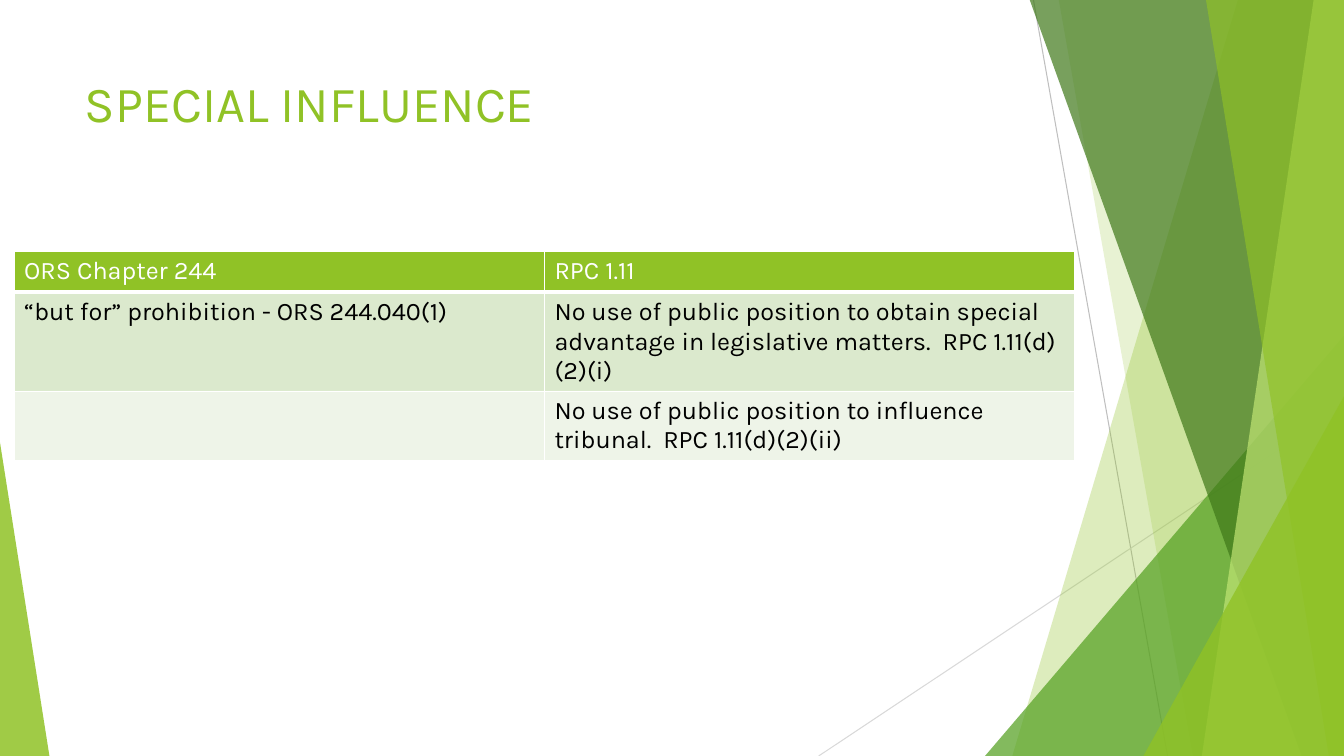
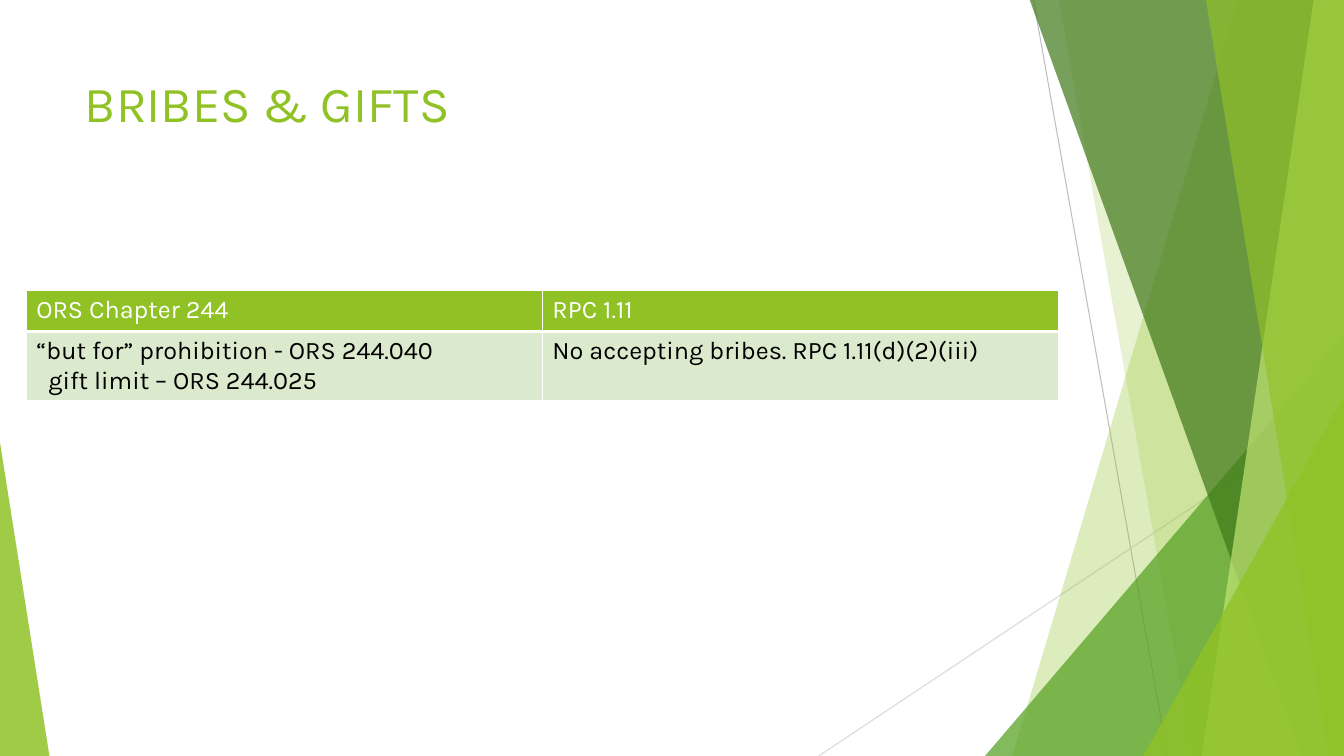
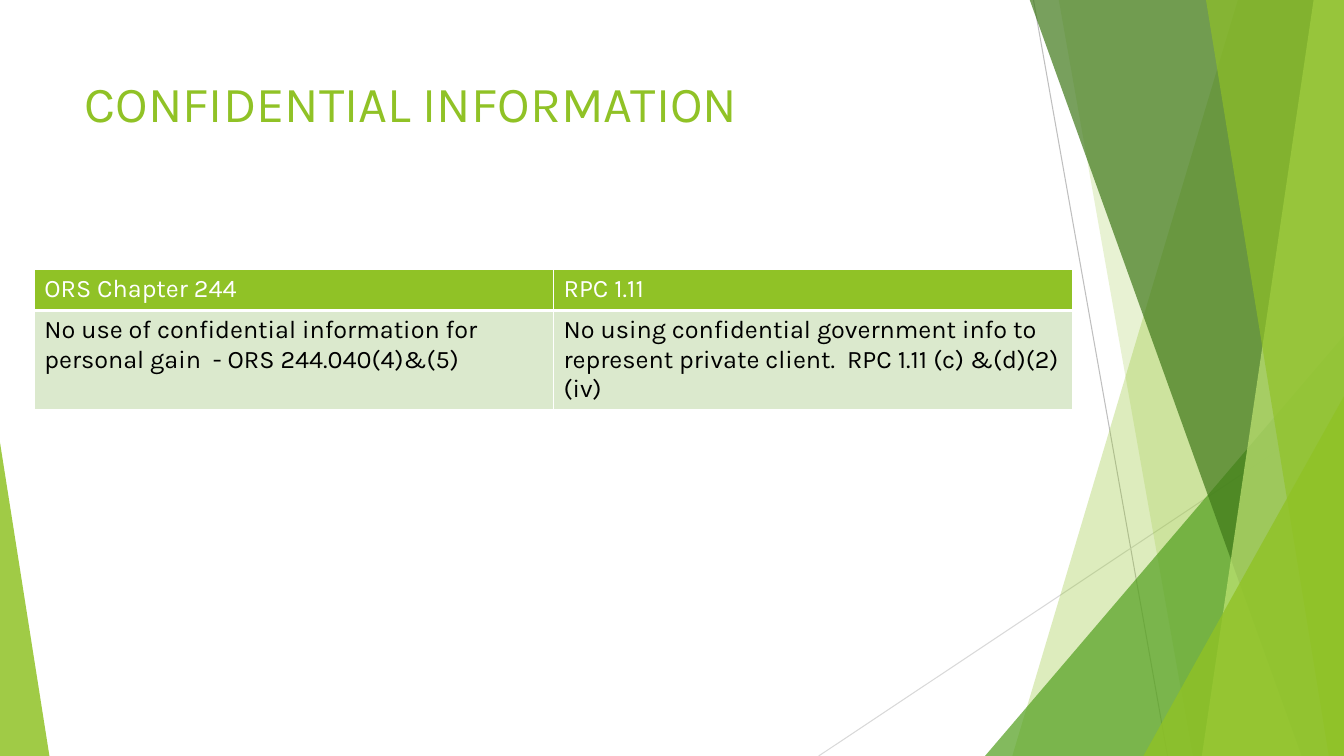
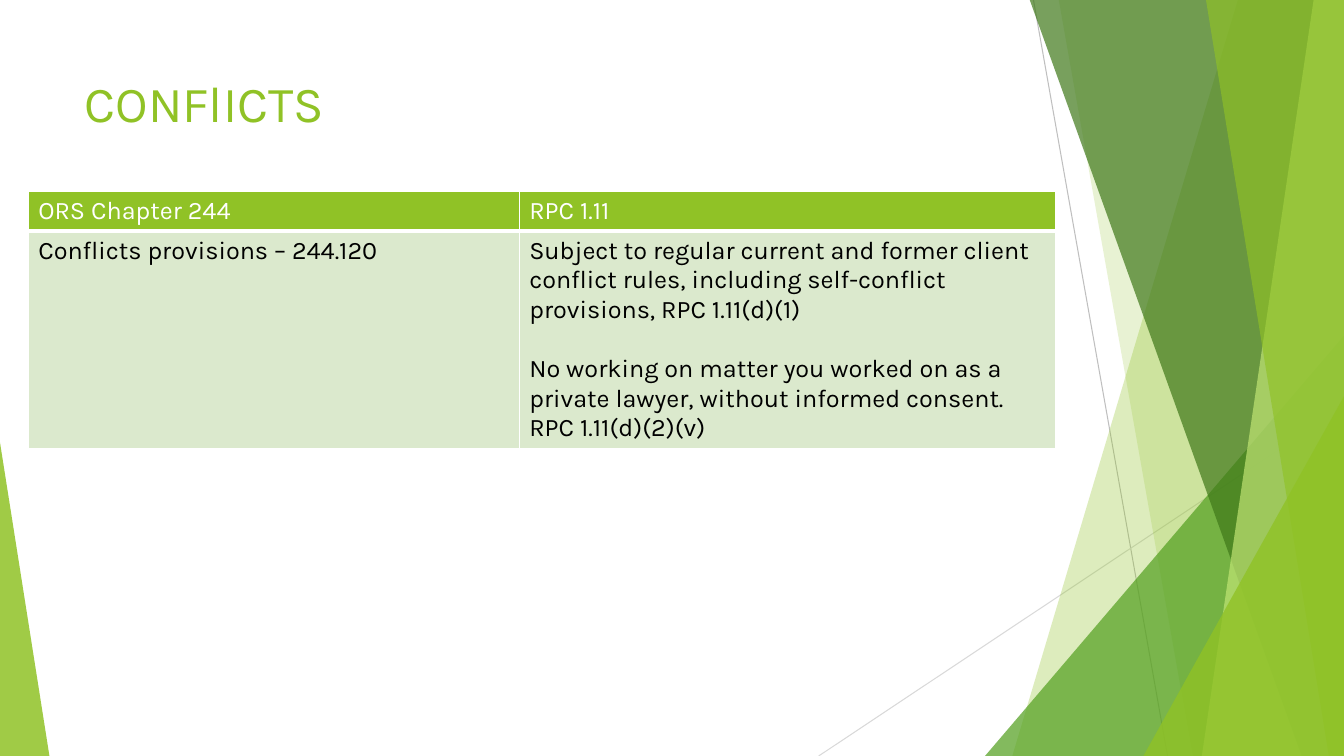
"""Build four slides that set ORS Chapter 244 beside RPC 1.11."""
from dataclasses import dataclass

from lxml import etree
from pptx import Presentation
from pptx import util as u
from pptx.dml import color
from pptx.enum import shapes, text
from pptx.oxml import ns

WIDTH, HEIGHT, BLEED = 13.33, 7.5, 0.01
FONT = "Karla"
LIME, GREEN, FOREST, PALE = "90C226", "54A021", "3F7819", "C0E474"
WHITE, BLACK = "FFFFFF", "000000"
BANDS = ("DBE9CD", "EEF4E8")
HEADER = ("ORS Chapter 244", "RPC 1.11")


@dataclass
class Para:
    """A cell paragraph with its left indent and space before."""
    text: str
    indent: float = 0
    before: float = 0


@dataclass
class Line:
    """A thin straight line."""
    start: tuple[float, float]
    end: tuple[float, float]
    colour: str


@dataclass
class Blade:
    """A slanted band that reaches the right edge."""
    top_x: float
    bottom_x: float
    colour: str
    alpha: int


@dataclass
class Wedge:
    """A right triangle standing on the bottom edge."""
    left: float
    top: float
    width: float
    apex: float
    colour: str
    alpha: int


@dataclass
class Comparison:
    """A titled two-column table."""
    title: str
    left: float
    top: float
    cols: tuple[float, float]
    rows: list[tuple[list[Para], list[Para]]]
    header_height: float = 0.41


LINES = [
    Line((10.25, 0), (11.58, HEIGHT), "BFBFBF"),
    Line((WIDTH, 4.03), (8.12, HEIGHT), "D9D9D9"),
]
FACETS = [
    Blade(12.28, 10.04, LIME, 30),
    Blade(10.5, 11.83, LIME, 20),
    Wedge(9.77, 3.33, 3.56, 1, GREEN, 72),
    Blade(10.21, 12.91, FOREST, 70),
    Blade(13.03, 11.92, PALE, 70),
    Blade(11.96, 13.18, LIME, 65),
    Wedge(11.34, 3.93, 1.99, 1, LIME, 80),
    Wedge(0, 4.39, 0.49, 0, LIME, 85),
]
SLIDES = [
    Comparison("SPECIAL INFLUENCE", 0.14, 2.49, (5.26, 5.26), [
        ([Para("“but for” prohibition - ORS 244.040(1)")],
         [Para("No use of public position to obtain special advantage in "
               "legislative matters.  RPC 1.11(d)(2)(i)")]),
        ([],
         [Para("No use of public position to influence tribunal.  "
               "RPC 1.11(d)(2)(ii)")]),
    ]),
    Comparison("BRIBES & GIFTS", 0.26, 2.88, (5.12, 5.12), [
        ([Para("“but for” prohibition - ORS 244.040"),
          Para("gift limit – ORS 244.025", indent=0.12)],
         [Para("No accepting bribes. RPC 1.11(d)(2)(iii)")]),
    ]),
    Comparison("CONFIDENTIAL INFORMATION", 0.34, 2.67, (5.15, 5.15), [
        ([Para("No use of confidential information for personal gain  "
               "- ORS 244.040(4)&(5)")],
         [Para("No using confidential government info to represent private "
               "client.  RPC 1.11 (c) &(d)(2)(iv)")]),
    ]),
    Comparison("CONFlICTS", 0.28, 1.9, (4.87, 5.32), [
        ([Para("Conflicts provisions – 244.120")],
         [Para("Subject to regular current and former client conflict rules, "
               "including self-conflict provisions, RPC 1.11(d)(1)"),
          Para("No working on matter you worked on as a private lawyer, "
               "without informed consent. RPC 1.11(d)(2)(v)", before=21)]),
    ], header_height=0.39),
]


def rgb(value: str) -> color.RGBColor:
    """Turn a hex string into a colour."""
    return color.RGBColor.from_string(value)


def style(p, size: float, colour: str) -> None:
    """Set the font of a paragraph."""
    p.font.name, p.font.size = FONT, u.Pt(size)
    p.font.color.rgb = rgb(colour)


def add_line(s, line: Line):
    """Draw a hairline without a shadow."""
    points = [u.Inches(v) for v in (*line.start, *line.end)]
    cn = s.shapes.add_connector(shapes.MSO_CONNECTOR.STRAIGHT, *points)
    cn.line.color.rgb, cn.line.width = rgb(line.colour), u.Pt(0.75)
    etree.SubElement(cn.element.spPr, ns.qn("a:effectLst"))
    return cn


def add_facet(s, facet: Blade | Wedge):
    """Draw a translucent facet."""
    if isinstance(facet, Blade):
        corners = [(WIDTH, -BLEED), (WIDTH, HEIGHT), (facet.bottom_x, HEIGHT)]
        builder = s.shapes.build_freeform(
            u.Inches(facet.top_x), u.Inches(-BLEED))
        builder.add_line_segments(
            [(u.Inches(x), u.Inches(y)) for x, y in corners])
        sp = builder.convert_to_shape()
    else:
        sp = s.shapes.add_shape(
            shapes.MSO_SHAPE.ISOSCELES_TRIANGLE,
            u.Inches(facet.left), u.Inches(facet.top),
            u.Inches(facet.width), u.Inches(HEIGHT - facet.top))
        sp.adjustments[0] = facet.apex
    sp.shadow.inherit = False
    sp.line.fill.background()
    sp.fill.solid()
    sp.fill.fore_color.rgb = rgb(facet.colour)
    tint = sp.element.spPr.find(ns.qn("a:solidFill"))[0]
    etree.SubElement(tint, ns.qn("a:alpha"), val=str(facet.alpha * 1000))
    return sp


def decorate(layout, s) -> None:
    """Draw the facets on a slide and move them to its layout."""
    drawn = [add_line(s, line) for line in LINES]
    drawn += [add_facet(s, facet) for facet in FACETS]
    for sp in drawn:
        layout.shapes.element.append(sp.element)


def add_title(s, title: str) -> None:
    """Place and format the title."""
    sp = s.shapes.title
    sp.left, sp.top = u.Inches(0.74), u.Inches(0.67)
    sp.width, sp.height = u.Inches(9.4), u.Inches(1.44)
    tf = sp.text_frame
    tf.text = title
    tf.auto_size = text.MSO_AUTO_SIZE.NONE
    tf.vertical_anchor = text.MSO_ANCHOR.TOP
    p = tf.paragraphs[0]
    p.alignment = text.PP_ALIGN.LEFT
    style(p, 36, LIME)


def set_borders(cell, bottom: float) -> None:
    """Give a cell white borders."""
    props = cell._tc.get_or_add_tcPr()
    for side, width in zip("LRTB", (1, 1, 1, bottom)):
        ln = etree.SubElement(
            props, ns.qn(f"a:ln{side}"), w=str(u.Pt(width)))
        fill = etree.SubElement(ln, ns.qn("a:solidFill"))
        etree.SubElement(fill, ns.qn("a:srgbClr"), val=WHITE)


def fill_cell(cell, paras: list[Para], fill: str, colour: str,
              bottom: float) -> None:
    """Write and format one cell."""
    set_borders(cell, bottom)
    cell.fill.solid()
    cell.fill.fore_color.rgb = rgb(fill)
    tf = cell.text_frame
    tf.text = "\n".join(para.text for para in paras)
    for p, para in zip(tf.paragraphs, paras):
        style(p, 18, colour)
        if para.before:
            p.space_before = u.Pt(para.before)
        if para.indent:
            p._p.get_or_add_pPr().set("marL", str(u.Inches(para.indent)))


def add_comparison(s, item: Comparison) -> None:
    """Draw the comparison table."""
    heights = [item.header_height] + [0.41] * len(item.rows)
    table = s.shapes.add_table(
        len(heights), len(item.cols), u.Inches(item.left), u.Inches(item.top),
        u.Inches(sum(item.cols)), u.Inches(sum(heights))).table
    table.first_row = table.horz_banding = False
    for col, width in zip(table.columns, item.cols):
        col.width = u.Inches(width)
    for row, height in zip(table.rows, heights):
        row.height = u.Inches(height)
    for c, label in enumerate(HEADER):
        fill_cell(table.cell(0, c), [Para(label)], LIME, WHITE, 3)
    for r, row in enumerate(item.rows):
        for c, paras in enumerate(row):
            fill_cell(table.cell(r + 1, c), paras, BANDS[r % 2], BLACK, 1)


def main() -> None:
    """Build and save the presentation."""
    prs = Presentation()
    prs.slide_width, prs.slide_height = u.Inches(WIDTH), u.Inches(HEIGHT)
    layout = prs.slide_layouts.get_by_name("Title Only")
    for i, item in enumerate(SLIDES):
        s = prs.slides.add_slide(layout)
        if i == 0:
            decorate(layout, s)
        add_title(s, item.title)
        add_comparison(s, item)
    prs.save("out.pptx")


if __name__ == "__main__":
    main()
